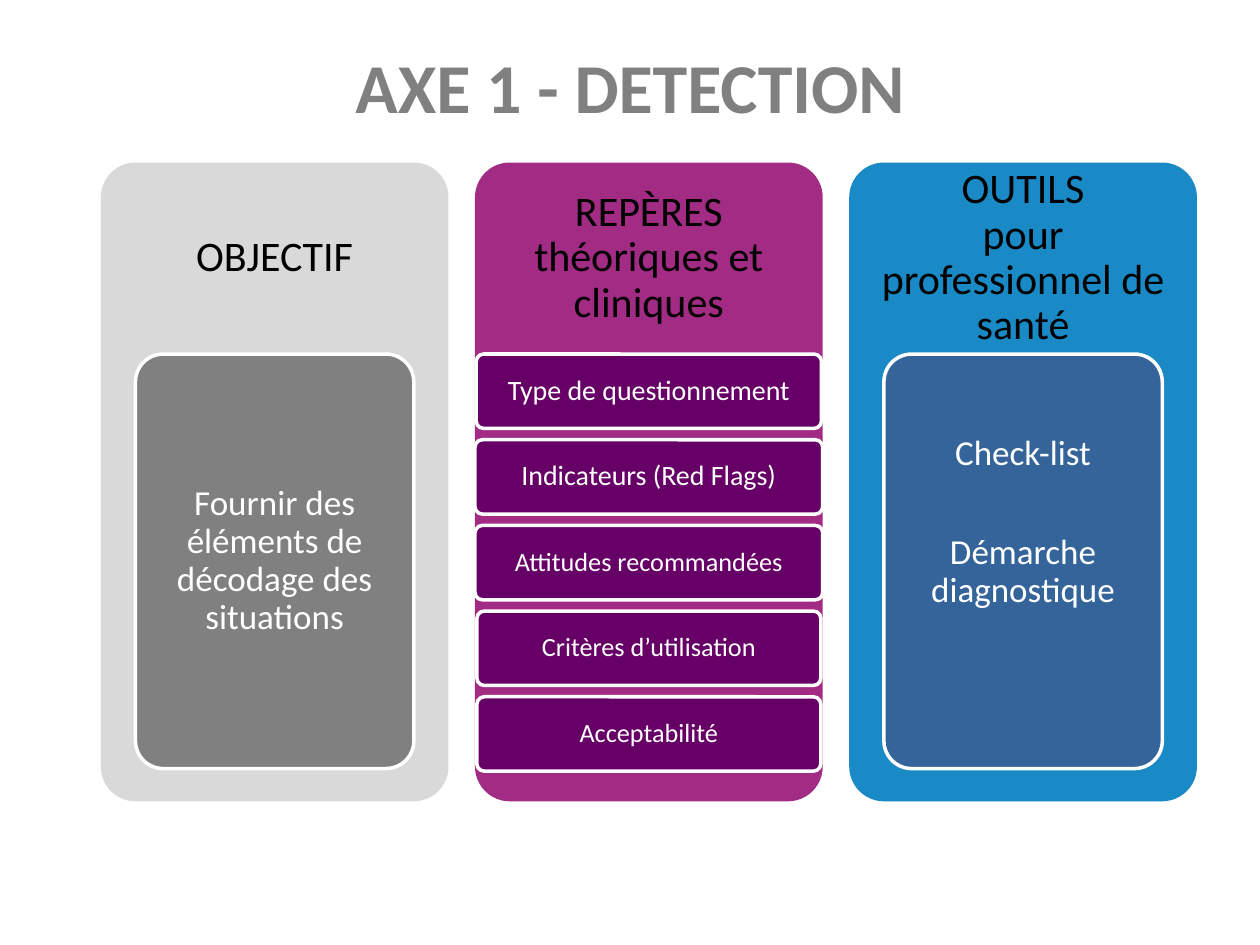
from pptx import Presentation
from pptx.dml.color import RGBColor
from pptx.enum.shapes import MSO_SHAPE
from pptx.enum.text import MSO_ANCHOR, PP_ALIGN
from pptx.util import Inches, Pt

BLACK = RGBColor(0x00, 0x00, 0x00)
WHITE = RGBColor(0xFF, 0xFF, 0xFF)
GREY = RGBColor(0x80, 0x80, 0x80)
LIGHT_GREY = RGBColor(0xD9, 0xD9, 0xD9)
MAGENTA = RGBColor(0xA2, 0x2B, 0x84)
PURPLE = RGBColor(0x66, 0x00, 0x66)
BLUE = RGBColor(0x19, 0x8A, 0xC6)
DARK_BLUE = RGBColor(0x35, 0x64, 0x9A)

COLUMN_LEFT, COLUMN_PITCH, COLUMN_WIDTH = 0.8, 2.97, 2.76
COLUMN_TOP, COLUMN_HEIGHT, HEADING_HEIGHT = 1.29, 5.07, 1.52
CARD_TOP, CARD_WIDTH, CARD_HEIGHT = 2.81, 2.21, 3.29
BAR_PITCH, BAR_HEIGHT = 0.68, 0.59

COLUMNS = [
    (["OBJECTIF"], LIGHT_GREY),
    (["REPÈRES", "théoriques et cliniques"], MAGENTA),
    (["OUTILS", "pour professionnel de santé"], BLUE),
]
BARS = [
    ("Type de questionnement", 2.74, 16),
    ("Indicateurs (Red Flags)", 2.76, 16),
    ("Attitudes recommandées", 2.76, 15),
    ("Critères d’utilisation", 2.73, 15),
    ("Acceptabilité", 2.73, 15),
]


def write_text(frame, lines, size, color, bold=False, spacing=0.9, gap=0):
    """Fill a text frame with centred paragraphs in one format."""
    frame.word_wrap = True
    frame.vertical_anchor = MSO_ANCHOR.MIDDLE
    for index, line in enumerate(lines):
        para = frame.add_paragraph() if index else frame.paragraphs[0]
        para.alignment = PP_ALIGN.CENTER
        para.line_spacing = spacing
        para.space_before = Pt(gap if index else 0)
        span = para.add_run()
        span.text = line
        span.font.name = "Calibri"
        span.font.size = Pt(size)
        span.font.bold = bold
        span.font.color.rgb = color


class SlideBuilder:
    """Hold the slide style and draw each kind of element."""

    def __init__(self, slide):
        """Keep the slide to draw on."""
        self.slide = slide

    def title(self, text):
        """Place the slide title."""
        title = self.slide.shapes.title
        title.left, title.top = Inches(0), Inches(0.17)
        title.width, title.height = Inches(10), Inches(1.01)
        write_text(title.text_frame, [text], 40, GREY, bold=True, spacing=1)

    def rounded(self, center, top, width, height, fill, outlined=True, bottom_inset=0.03):
        """Draw a rounded box centred on a column axis."""
        box = self.slide.shapes.add_shape(
            MSO_SHAPE.ROUNDED_RECTANGLE, Inches(center - width / 2), Inches(top),
            Inches(width), Inches(height))
        box.adjustments[0] = 0.1
        box.shadow.inherit = False
        box.fill.solid()
        box.fill.fore_color.rgb = fill
        if outlined:
            box.line.color.rgb = WHITE
            box.line.width = Pt(2)
        else:
            box.line.fill.background()
        frame = box.text_frame
        frame.margin_left = frame.margin_right = Inches(0.03)
        frame.margin_top = Inches(0.03)
        frame.margin_bottom = Inches(bottom_inset)
        return frame

    def column(self, center, heading, fill):
        """Draw a column panel with its heading at the top."""
        frame = self.rounded(center, COLUMN_TOP, COLUMN_WIDTH, COLUMN_HEIGHT, fill, outlined=False,
                             bottom_inset=COLUMN_HEIGHT - HEADING_HEIGHT + 0.03)
        write_text(frame, heading, 24, BLACK)

    def card(self, center, lines, fill, gap=0, bottom_inset=0.03):
        """Draw the single large card of a column."""
        frame = self.rounded(center, CARD_TOP, CARD_WIDTH, CARD_HEIGHT, fill,
                             bottom_inset=bottom_inset)
        write_text(frame, lines, 20, WHITE, gap=gap)

    def bars(self, center):
        """Stack the reference bars of a column."""
        for index, (text, width, size) in enumerate(BARS):
            frame = self.rounded(center, CARD_TOP + index * BAR_PITCH, width, BAR_HEIGHT, PURPLE)
            write_text(frame, [text], size, WHITE)


def main():
    """Build and save the deck."""
    deck = Presentation()
    deck.slide_width, deck.slide_height = Inches(10), Inches(7.5)
    builder = SlideBuilder(deck.slides.add_slide(deck.slide_layouts[5]))
    builder.title("AXE 1 - DETECTION")
    centers = [COLUMN_LEFT + COLUMN_WIDTH / 2 + index * COLUMN_PITCH for index in range(3)]
    for center, (heading, fill) in zip(centers, COLUMNS):
        builder.column(center, heading, fill)
    goal, references, tools = centers
    builder.card(goal, ["Fournir des éléments de décodage des situations"], GREY)
    builder.bars(references)
    builder.card(tools, ["Check-list", "Démarche diagnostique"], DARK_BLUE,
                 gap=35, bottom_inset=0.65)
    deck.save("out.pptx")


if __name__ == "__main__":
    main()
